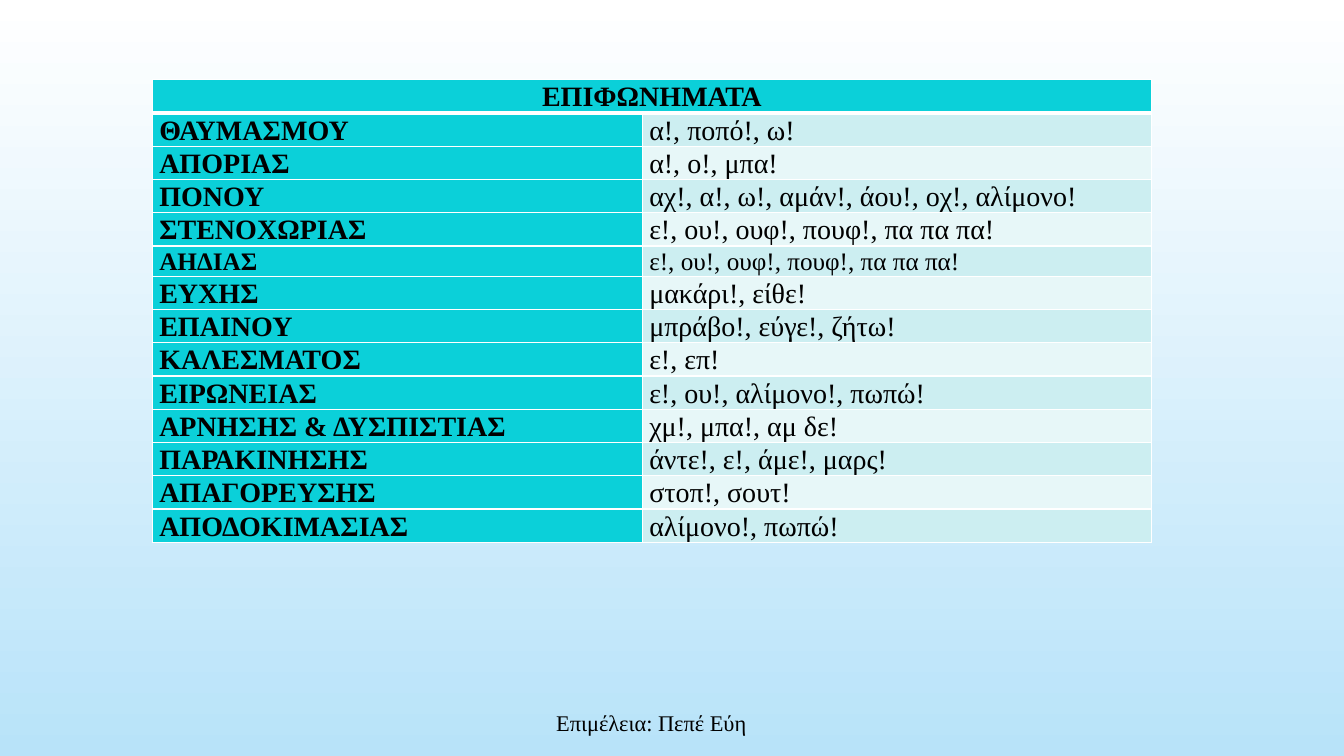
from lxml.etree import SubElement
from pptx import Presentation
from pptx.dml.color import RGBColor
from pptx.enum.text import MSO_ANCHOR as Anchor, PP_ALIGN as Align
from pptx.oxml.ns import qn
from pptx.util import Inches, Pt

TITLE = "ΕΠΙΦΩΝΗΜΑΤΑ"
INTERJECTIONS = [
    ("ΘΑΥΜΑΣΜΟΥ", "α!, ποπό!, ω!"),
    ("ΑΠΟΡΙΑΣ", "α!, ο!, μπα!"),
    ("ΠΟΝΟΥ", "αχ!, α!, ω!, αμάν!, άου!, οχ!, αλίμονο!"),
    ("ΣΤΕΝΟΧΩΡΙΑΣ", "ε!, ου!, ουφ!, πουφ!, πα πα πα!"),
    ("ΑΗΔΙΑΣ", "ε!, ου!, ουφ!, πουφ!, πα πα πα!"),
    ("ΕΥΧΗΣ", "μακάρι!, είθε!"),
    ("ΕΠΑΙΝΟΥ", "μπράβο!, εύγε!, ζήτω!"),
    ("ΚΑΛΕΣΜΑΤΟΣ", "ε!, επ!"),
    ("ΕΙΡΩΝΕΙΑΣ", "ε!, ου!, αλίμονο!, πωπώ!"),
    ("ΑΡΝΗΣΗΣ & ΔΥΣΠΙΣΤΙΑΣ", "χμ!, μπα!, αμ δε!"),
    ("ΠΑΡΑΚΙΝΗΣΗΣ", "άντε!, ε!, άμε!, μαρς!"),
    ("ΑΠΑΓΟΡΕΥΣΗΣ", "στοπ!, σουτ!"),
    ("ΑΠΟΔΟΚΙΜΑΣΙΑΣ", "αλίμονο!, πωπώ!"),
]
CREDIT = "Επιμέλεια: Πεπέ Εύη"
SMALL_ROW = "ΑΗΔΙΑΣ"
COLUMN_WIDTHS = (4.86, 5.05)
ROW_HEIGHT, SMALL_HEIGHT = 0.33, 0.3
SKY = ("FFFFFF", "B8E3F9")
TURQUOISE, BANDS = "0BD0D9", ("E7F7F8", "CCEEF1")
BLACK, WHITE = "000000", "FFFFFF"
CELL_FORMAT = {
    "margin_left": Inches(0.07),
    "margin_right": Inches(0.07),
    "margin_top": 0,
    "margin_bottom": 0,
}


def color(value):
    return RGBColor.from_string(value)


def write(frame, text, size, bold=False, align=Align.LEFT, spacing=1.0):
    para = frame.paragraphs[0]
    para.alignment = align
    para.line_spacing = spacing
    span = para.add_run()
    span.text = text
    font_format = {"name": "Times New Roman", "size": Pt(size), "bold": bold}
    for name, value in font_format.items():
        setattr(span.font, name, value)
    span.font.color.rgb = color(BLACK)


def add_borders(cell, widths):
    properties = cell._tc.get_or_add_tcPr()
    for side, width in zip("LRTB", widths):
        line = SubElement(properties, qn(f"a:ln{side}"), w=str(Pt(width)))
        fill = SubElement(line, qn("a:solidFill"))
        SubElement(fill, qn("a:srgbClr"), val=WHITE)


def style_cell(cell, fill, widths):
    for name, value in CELL_FORMAT.items():
        setattr(cell, name, value)
    add_borders(cell, widths)
    cell.fill.solid()
    cell.fill.fore_color.rgb = color(fill)


def paint_background(page):
    fill = page.background.fill
    fill.gradient()
    fill.gradient_angle = 270
    for stop, shade, position in zip(fill.gradient_stops, SKY, (0, 1)):
        stop.color.rgb = color(shade)
        stop.position = position


def add_interjections(page):
    rows = [(TITLE, "")] + INTERJECTIONS
    heights = [SMALL_HEIGHT if label == SMALL_ROW else ROW_HEIGHT for label, _ in rows]
    table = page.shapes.add_table(
        len(rows), 2, Inches(1.51), Inches(0.79),
        Inches(sum(COLUMN_WIDTHS)), Inches(sum(heights)),
    ).table
    for column, width in zip(table.columns, COLUMN_WIDTHS):
        column.width = Inches(width)
    for index, (texts, height) in enumerate(zip(rows, heights)):
        table.rows[index].height = Inches(height)
        size = 18 if texts[0] == SMALL_ROW else 20
        widths = (1, 1, 3 if index == 1 else 1, 3 if index == 0 else 1)
        fills = (TURQUOISE, BANDS[index % 2] if index else TURQUOISE)
        for place, (text, fill) in enumerate(zip(texts, fills)):
            cell = table.cell(index, place)
            style_cell(cell, fill, widths)
            if text:
                align = Align.LEFT if index else Align.CENTER
                write(cell.text_frame, text, size, place == 0, align, 1.07)
    table.cell(0, 0).merge(table.cell(0, 1))


def add_credit(page):
    box = page.shapes.add_textbox(Inches(2.81), Inches(6.97), Inches(7.3), Inches(0.4))
    box.text_frame.word_wrap = True
    box.text_frame.vertical_anchor = Anchor.MIDDLE
    write(box.text_frame, CREDIT, 16, align=Align.CENTER)


def main():
    deck = Presentation()
    deck.slide_width, deck.slide_height = Inches(13.33), Inches(7.5)
    page = deck.slides.add_slide(deck.slide_layouts[6])
    paint_background(page)
    add_interjections(page)
    add_credit(page)
    deck.save("out.pptx")


if __name__ == "__main__":
    main()
